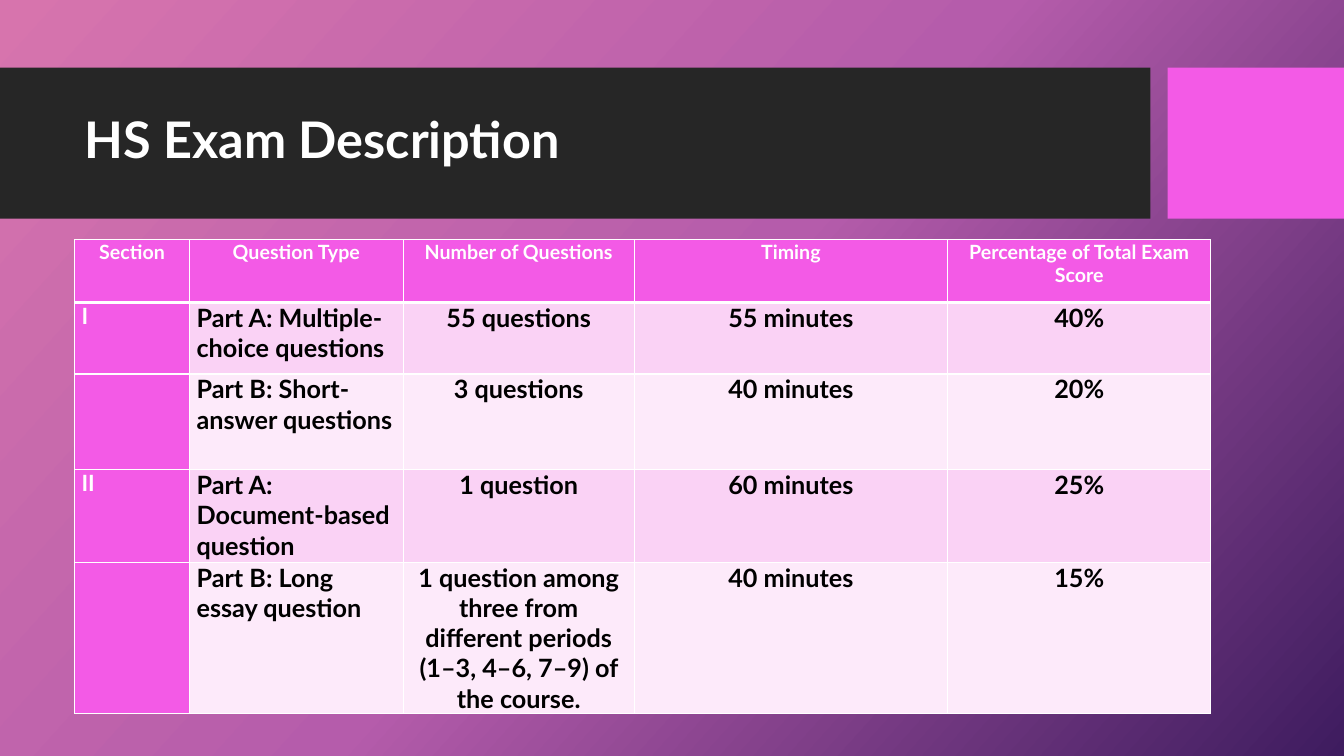
from copy import deepcopy

from lxml import etree
from pptx import Presentation
from pptx.dml.color import RGBColor
from pptx.enum import shapes, text
from pptx.oxml import ns
from pptx.util import Inches, Pt

FONT = "Lato"
WHITE = RGBColor(0xFF, 0xFF, 0xFF)
BLACK = RGBColor(0x00, 0x00, 0x00)
CHARCOAL = RGBColor(0x26, 0x26, 0x26)
PINK = RGBColor(0xF3, 0x5A, 0xE6)
ROW_FILLS = [RGBColor(0xFA, 0xD2, 0xF5), RGBColor(0xFD, 0xEA, 0xFA)]
GRADIENT = [
    (0, RGBColor(0xD7, 0x74, 0xAD)),
    (0.5, RGBColor(0xB5, 0x5C, 0xAB)),
    (1, RGBColor(0x3E, 0x1C, 0x5F)),
]

TITLE = "HS Exam Description"
BANDS = [(0, 11.41, CHARCOAL), (11.58, 1.75, PINK)]
COLUMN_WIDTHS = [1.14, 2.12, 2.29, 3.11, 2.61]
ROW_HEIGHTS = [0.62, 0.71, 0.95, 0.92, 1.42]
EXAM_ROWS = [
    ["Section", "Question Type", "Number of Questions", "Timing", "Percentage of Total Exam Score"],
    ["I", "Part A: Multiple-choice questions", "55 questions", "55 minutes", "40%"],
    ["", "Part B: Short-answer questions", "3 questions", "40 minutes", "20%"],
    ["II", "Part A: Document-based question", "1 question", "60 minutes", "25%"],
    ["", "Part B: Long essay question",
     "1 question among three from different periods (1–3, 4–6, 7–9) of the course.",
     "40 minutes", "15%"],
]


def paint_background(slide):
    """Fill the slide with the three-stop diagonal gradient."""
    fill = slide.background.fill
    fill.gradient()
    fill.gradient_angle = 318
    stop_list = next(slide.element.iter(ns.qn("a:gsLst")))
    stop_list.insert(1, deepcopy(stop_list[0]))
    for stop, (position, color) in zip(fill.gradient_stops, GRADIENT):
        stop.position = position
        stop.color.rgb = color


def add_bands(slide):
    """Add the dark title band and the pink block beside it."""
    for left, width, color in BANDS:
        band = slide.shapes.add_shape(
            shapes.MSO_SHAPE.RECTANGLE, Inches(left), Inches(0.67), Inches(width), Inches(1.5))
        band.shadow.inherit = False
        band.fill.solid()
        band.fill.fore_color.rgb = color
        band.line.fill.background()


def style_runs(paragraph, size, color):
    """Give every run of a paragraph the bold slide font."""
    for run in paragraph.runs:
        run.font.name = FONT
        run.font.size = Pt(size)
        run.font.bold = True
        run.font.color.rgb = color


def place_title(slide):
    """Set the title in front of the dark band."""
    title = slide.shapes.title
    title.left, title.top, title.width, title.height = map(Inches, (0.74, 0.82, 10.51, 1.18))
    title.element.getparent().append(title.element)
    frame = title.text_frame
    frame.text = TITLE
    frame.word_wrap = True
    frame.vertical_anchor = text.MSO_ANCHOR.MIDDLE
    paragraph = frame.paragraphs[0]
    paragraph.alignment = text.PP_ALIGN.LEFT
    paragraph.line_spacing = 0.9
    style_runs(paragraph, 36, WHITE)


def set_borders(cell, bottom_width):
    """Draw white borders round a cell, ahead of its fill."""
    properties = cell._tc.get_or_add_tcPr()
    for index, side in enumerate(("lnL", "lnR", "lnT", "lnB")):
        width = bottom_width if side == "lnB" else 1
        line = etree.Element(ns.qn("a:" + side), w=str(Pt(width)))
        solid = etree.SubElement(line, ns.qn("a:solidFill"))
        etree.SubElement(solid, ns.qn("a:srgbClr"), val=str(WHITE))
        properties.insert(index, line)


def format_cell(cell, row, column):
    """Style a cell by its place as header, section or body."""
    header, section = row == 0, column == 0
    cell.fill.solid()
    cell.fill.fore_color.rgb = PINK if header or section else ROW_FILLS[(row - 1) % 2]
    cell.margin_left = cell.margin_right = Inches(0.07)
    cell.margin_top = cell.margin_bottom = 0
    paragraph = cell.text_frame.paragraphs[0]
    centred = header or column > 1
    paragraph.alignment = text.PP_ALIGN.CENTER if centred else text.PP_ALIGN.LEFT
    size = 14 if header else 16 if section else 18
    style_runs(paragraph, size, WHITE if header or section else BLACK)
    set_borders(cell, 3 if header else 1)


def add_exam_table(slide):
    """Add the table of exam sections."""
    table = slide.shapes.add_table(
        len(ROW_HEIGHTS), len(COLUMN_WIDTHS), Inches(0.74), Inches(2.38),
        Inches(sum(COLUMN_WIDTHS)), Inches(sum(ROW_HEIGHTS))).table
    for column, width in zip(table.columns, COLUMN_WIDTHS):
        column.width = Inches(width)
    for row, height in zip(table.rows, ROW_HEIGHTS):
        row.height = Inches(height)
    for row, values in enumerate(EXAM_ROWS):
        for column, value in enumerate(values):
            cell = table.cell(row, column)
            cell.text_frame.text = value
            format_cell(cell, row, column)


def main():
    """Build the exam description slide."""
    presentation = Presentation()
    presentation.slide_width = Inches(13.33)
    presentation.slide_height = Inches(7.5)
    slide = presentation.slides.add_slide(presentation.slide_layouts[5])
    paint_background(slide)
    add_bands(slide)
    place_title(slide)
    add_exam_table(slide)
    presentation.save("out.pptx")


if __name__ == "__main__":
    main()
